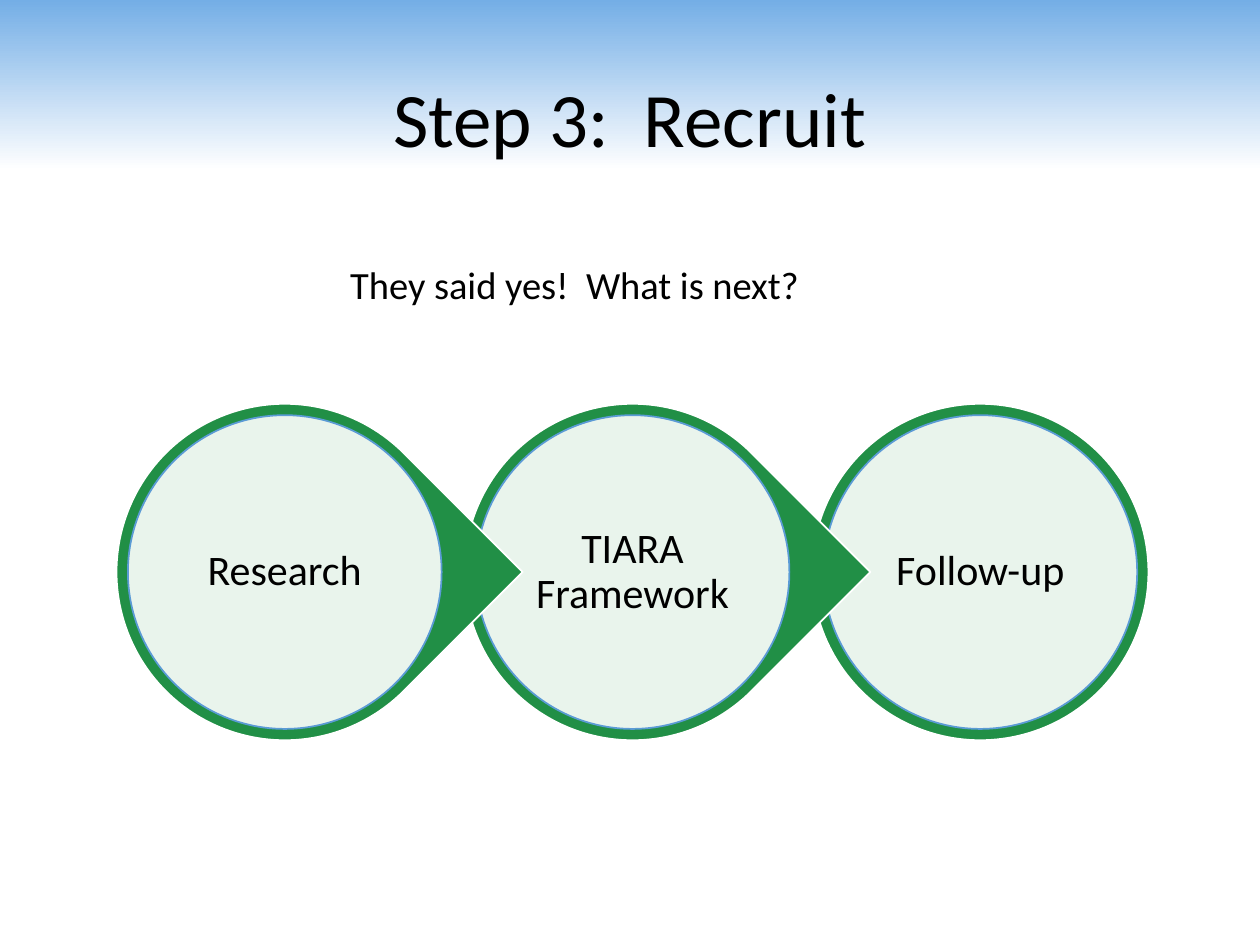
from pptx import Presentation
from pptx.dml.color import RGBColor
from pptx.enum.shapes import MSO_SHAPE as Shape
from pptx.enum.text import MSO_ANCHOR as Anchor, PP_ALIGN as Align
from pptx.oxml.ns import qn
from pptx.util import Inches, Pt
from lxml import etree

BLACK = RGBColor(0x00, 0x00, 0x00)
WHITE = RGBColor(0xFF, 0xFF, 0xFF)
GREEN = RGBColor(0x21, 0x8F, 0x46)
BLUE = RGBColor(0x5B, 0x9B, 0xD5)
SKY = RGBColor(0x74, 0xAE, 0xE6)

presentation = Presentation()
presentation.slide_width, presentation.slide_height = Inches(10), Inches(7.5)
slide = presentation.slides.add_slide(presentation.slide_layouts[6])


def add_text(text, box, size, inset=0.05, wrap=True, anchor=Anchor.MIDDLE, **paragraph_format):
    frame = slide.shapes.add_textbox(*map(Inches, box)).text_frame
    frame.word_wrap, frame.vertical_anchor = wrap, anchor
    for side in ("left", "top", "right", "bottom"):
        setattr(frame, f"margin_{side}", Inches(inset))
    paragraph = frame.paragraphs[0]
    for name, value in paragraph_format.items():
        setattr(paragraph, name, value)
    run = paragraph.add_run()
    run.text = text
    for name, value in {"name": "Calibri", "size": Pt(size)}.items():
        setattr(run.font, name, value)
    run.font.color.rgb = BLACK


def add_disc(kind, center_x, center_y, diameter, fill, line):
    shape = slide.shapes.add_shape(
        kind, Inches(center_x - diameter / 2), Inches(center_y - diameter / 2),
        Inches(diameter), Inches(diameter))
    shape.shadow.inherit = False
    shape.fill.solid()
    shape.fill.fore_color.rgb = fill
    shape.line.color.rgb = line
    shape.line.width = Pt(1)
    return shape


# Background fading from white up to sky blue
background = slide.background.fill
background.gradient()
background.gradient_angle = 90
for stop, position, color in zip(background.gradient_stops, (0.82, 1), (WHITE, SKY)):
    stop.position = position
    stop.color.rgb = color

# Title and question
add_text("Step 3:  Recruit", (0.5, 0.3, 9, 1.25), 44, alignment=Align.CENTER)
add_text("They said yes!  What is next?", (2.73, 2.02, 4.06, 0.46), 22,
         wrap=False, anchor=Anchor.TOP)

# Circle chain, drawn from the last step so each point overlaps the next circle
steps = [("Research", 0.46), ("TIARA Framework", 0.81), ("Follow-up", 0.46)]
center_y = 4.54
for index, (label, height) in reversed(list(enumerate(steps))):
    center_x = 2.26 + 2.76 * index
    is_last = index == len(steps) - 1
    outer = add_disc(Shape.OVAL if is_last else Shape.TEAR,
                     center_x, center_y, 2.67, GREEN, WHITE)
    if not is_last:
        outer.rotation = 45

    inner = add_disc(Shape.OVAL, center_x, center_y, 2.49, WHITE, BLUE)
    color = inner.fill._xPr.find(qn("a:solidFill"))[0]
    etree.SubElement(color, qn("a:alpha")).set("val", "90000")

    add_text(label, (center_x - 0.89, center_y - height / 2, 1.78, height), 24, inset=0.03,
             alignment=Align.CENTER, line_spacing=0.9, space_before=Pt(10))

presentation.save("out.pptx")
